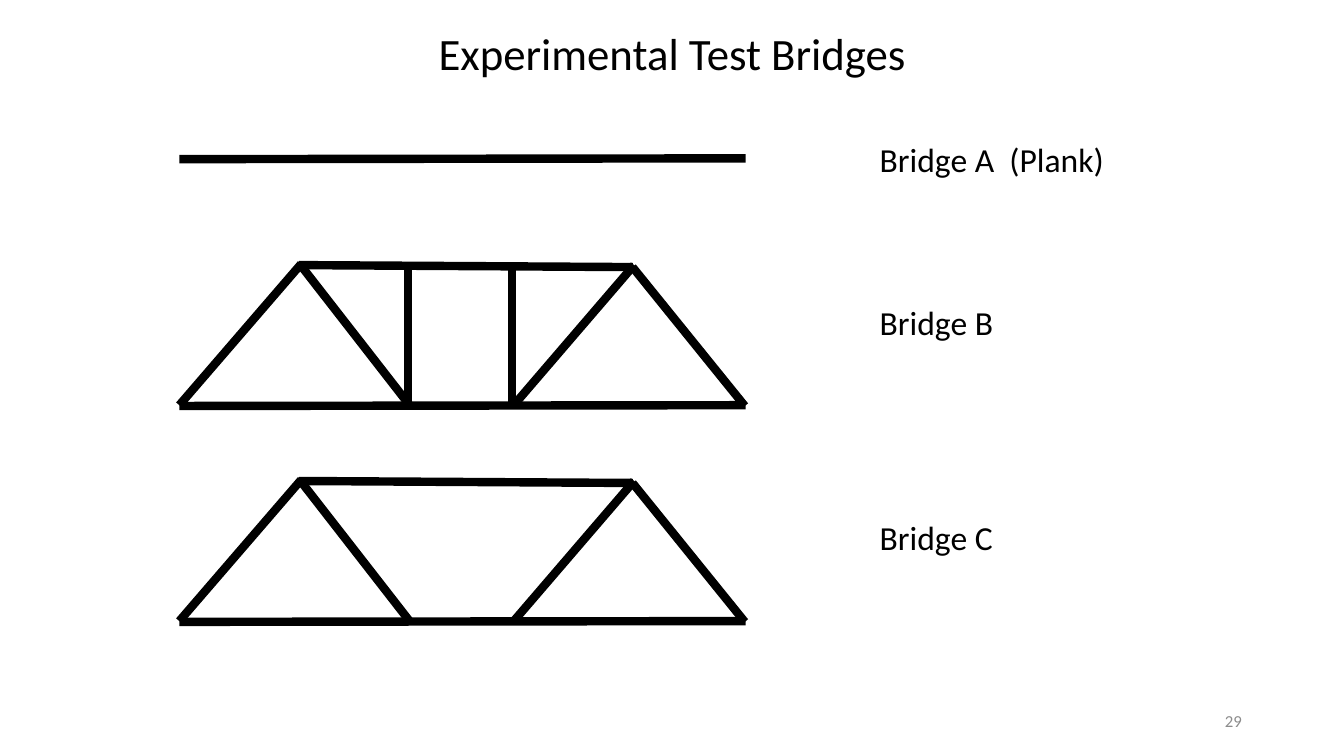
import lxml.etree
import pptx
import pptx.dml.color
import pptx.enum.shapes
import pptx.enum.text
import pptx.oxml.ns
import pptx.util

Cm = pptx.util.Cm
ALIGN = pptx.enum.text.PP_ALIGN
FIT = pptx.enum.text.MSO_AUTO_SIZE
ANCHOR = pptx.enum.text.MSO_ANCHOR

DECK = (0, 3.58, 14.27, 3.56)
FRAME = [
    DECK,
    (3.02, 0.03, 11.43, 0.08),
    (0, 3.56, 3.07, 0),
    (8.41, 3.58, 11.46, 0.03),
    (5.84, 3.61, 3.07, 0.05),
    (14.25, 3.58, 11.42, 0.08),
]
POSTS = [(x, 3.61, x, 0) for x in (5.77, 8.38)]
LEFT = 4.52


def tint(code):
    return pptx.dml.color.RGBColor.from_string(code)


def style(target, values):
    for name, value in values.items():
        setattr(target, name, value)


def label(slide, box, text, size, color="000000", align=ALIGN.LEFT,
          anchor=ANCHOR.TOP, fit=FIT.SHAPE_TO_FIT_TEXT):
    frame = slide.shapes.add_textbox(*map(Cm, box)).text_frame
    style(frame, {"word_wrap": True, "auto_size": fit, "vertical_anchor": anchor})
    line = frame.paragraphs[0]
    line.alignment = align
    run = line.add_run()
    run.text = text
    style(run.font, {"name": "Calibri", "size": pptx.util.Pt(size)})
    run.font.color.rgb = tint(color)


def bridge(shapes, left, top, bars):
    for x1, y1, x2, y2 in bars:
        bar = shapes.add_connector(
            pptx.enum.shapes.MSO_CONNECTOR.STRAIGHT,
            Cm(left + x1), Cm(top + y1), Cm(left + x2), Cm(top + y2))
        bar.line.width = pptx.util.Pt(6)
        bar.line.color.rgb = tint("000000")
        lxml.etree.SubElement(bar._element.spPr, pptx.oxml.ns.qn("a:effectLst"))


def main():
    deck = pptx.Presentation()
    style(deck, {"slide_width": Cm(33.87), "slide_height": Cm(19.05)})
    slide = deck.slides.add_slide(deck.slide_layouts[6])

    label(slide, (23.93, 17.65, 7.62, 1.02), "29", 12, "8C8C8C",
          ALIGN.RIGHT, ANCHOR.MIDDLE, FIT.NONE)
    for top, bars in ((6.65, FRAME + POSTS), (12.09, FRAME)):
        bridge(slide.shapes.add_group_shape().shapes, LEFT, top, bars)
    bridge(slide.shapes, LEFT, 0.43, [DECK])

    names = {"Bridge A  (Plank)": 3.38, "Bridge B": 7.49, "Bridge C": 12.9}
    for text, top in names.items():
        label(slide, (21.92, top, 8.56, 1.28), text, 24)
    label(slide, (7.04, 0.53, 19.81, 1.62), "Experimental Test Bridges", 32,
          align=ALIGN.CENTER)
    deck.save("out.pptx")


if __name__ == "__main__":
    main()
